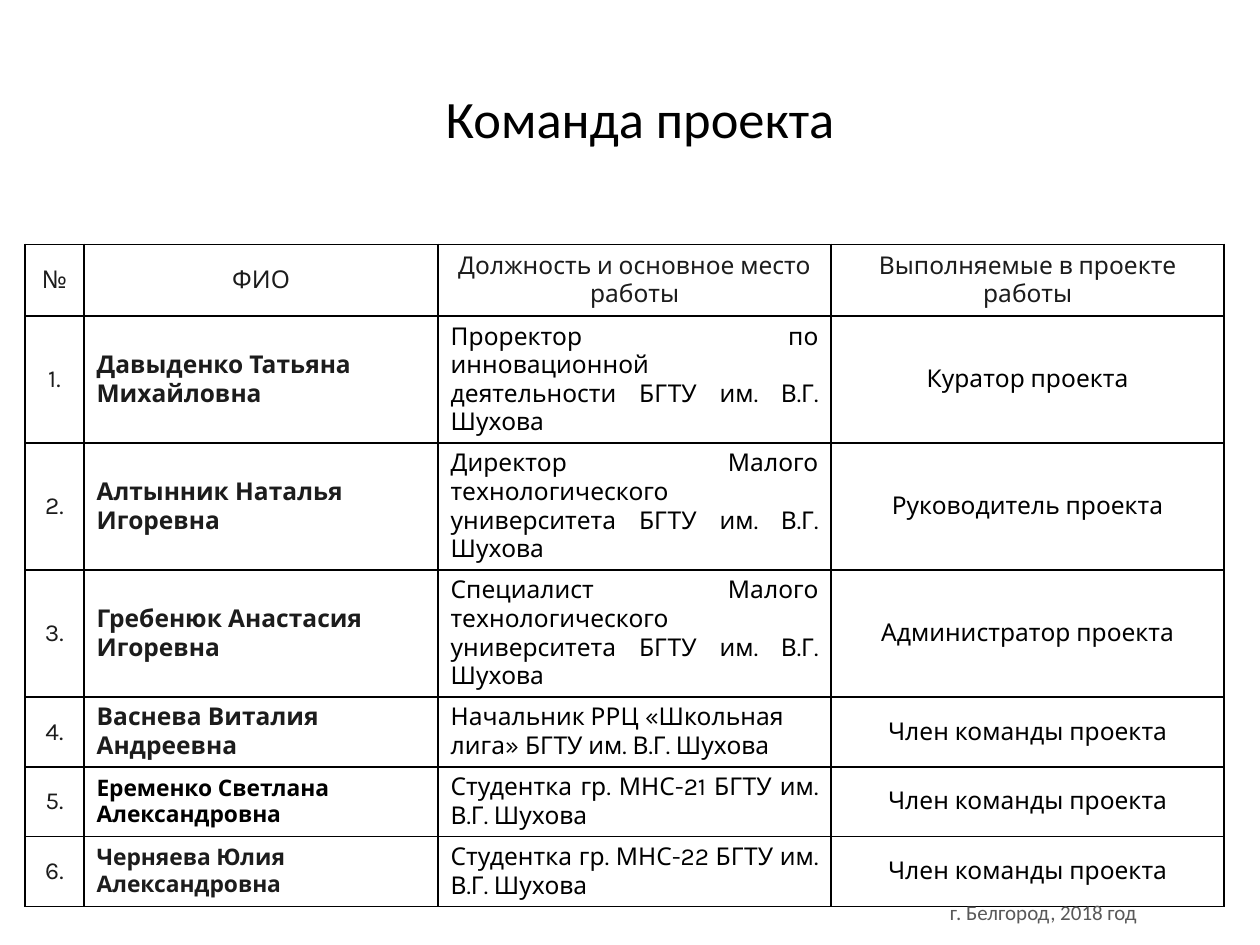
from dataclasses import dataclass

from lxml import etree
from pptx import Presentation
from pptx import util as u
from pptx.dml.color import RGBColor
from pptx.enum import text
from pptx.oxml import ns

COLORS = {"black": "000000", "ink": "1C1C1C", "gray": "595959"}
ALIGN = text.PP_ALIGN
COLUMN_WIDTHS = (33.84, 202.32, 224.64, 224.64)
ROW_HEIGHTS = (41, 24, 24, 24, 29, 24, 29)
HEADERS = ("№", "ФИО", "Должность и основное место работы", "Выполняемые в проекте работы")


@dataclass
class Style:
    size: float = 14
    color: str = "black"
    bold: bool = False
    align: ALIGN = ALIGN.CENTER
    font: str = "Karla"


@dataclass
class Member:
    name: str
    position: str
    role: str = "Член команды проекта"
    name_size: float = 14
    name_color: str = "ink"
    position_align: ALIGN = ALIGN.JUSTIFY
    tight_role: bool = True


MEMBERS = (
    Member("Давыденко Татьяна Михайловна",
           "Проректор по инновационной деятельности БГТУ им. В.Г. Шухова", "Куратор проекта"),
    Member("Алтынник Наталья Игоревна",
           "Директор Малого технологического университета БГТУ им. В.Г. Шухова", "Руководитель проекта"),
    Member("Гребенюк Анастасия Игоревна",
           "Специалист Малого технологического университета БГТУ им. В.Г. Шухова", "Администратор проекта"),
    Member("Васнева Виталия Андреевна",
           "Начальник РРЦ «Школьная лига» БГТУ им. В.Г. Шухова", position_align=ALIGN.LEFT),
    Member("Еременко Светлана Александровна", "Студентка гр. МНС-21 БГТУ им. В.Г. Шухова",
           name_size=13, name_color="black", tight_role=False),
    Member("Черняева Юлия Александровна", "Студентка гр. МНС-22 БГТУ им. В.Г. Шухова",
           name_size=13, tight_role=False),
)


def write_text(text_frame, content: str, style: Style) -> None:
    text_frame.text = content
    paragraph = text_frame.paragraphs[0]
    paragraph.alignment = style.align
    font = paragraph.runs[0].font
    font.name, font.size, font.bold = style.font, u.Pt(style.size), style.bold
    font.color.rgb = RGBColor.from_string(COLORS[style.color])


def add_borders(cell) -> None:
    properties = cell._tc.get_or_add_tcPr()
    for position, side in enumerate(("lnL", "lnR", "lnT", "lnB")):
        line = etree.Element(ns.qn(f"a:{side}"), w=str(u.Pt(1)))
        fill = etree.SubElement(line, ns.qn("a:solidFill"))
        etree.SubElement(fill, ns.qn("a:srgbClr"), val=COLORS["black"])
        properties.insert(position, line)


def fill_cell(cell, content: str, style: Style, tight: bool = False) -> None:
    write_text(cell.text_frame, content, style)
    cell.vertical_anchor = text.MSO_ANCHOR.MIDDLE
    cell.margin_left = cell.margin_right = u.Pt(5.04 if tight else 7.2)
    cell.margin_top = cell.margin_bottom = u.Pt(0 if tight else 3.6)
    cell.fill.background()
    add_borders(cell)


def add_team_table(slide) -> None:
    frame = slide.shapes.add_table(len(MEMBERS) + 1, len(HEADERS), u.Pt(14.2), u.Pt(139.7),
                                   u.Pt(sum(COLUMN_WIDTHS)), u.Pt(sum(ROW_HEIGHTS)))
    table = frame.table
    table.first_row = table.horz_banding = False
    for column, width in zip(table.columns, COLUMN_WIDTHS):
        column.width = u.Pt(width)
    for row, height in zip(table.rows, ROW_HEIGHTS):
        row.height = u.Pt(height)
    for index, header in enumerate(HEADERS):
        fill_cell(table.cell(0, index), header, Style(color="ink"))
    for number, member in enumerate(MEMBERS, start=1):
        number_cell, name_cell, position_cell, role_cell = table.rows[number].cells
        fill_cell(number_cell, f"{number}.", Style(color="ink"))
        fill_cell(name_cell, member.name, Style(member.name_size, member.name_color, True, ALIGN.LEFT))
        fill_cell(position_cell, member.position, Style(align=member.position_align))
        fill_cell(role_cell, member.role, Style(), member.tight_role)


def add_title(slide) -> None:
    title = slide.shapes.title
    title.left, title.top, title.width, title.height = map(u.Pt, (23.8, 33.8, 684, 66.2))
    title.text_frame.vertical_anchor = text.MSO_ANCHOR.MIDDLE
    write_text(title.text_frame, "Команда проекта", Style(size=30, font="Calibri"))


def add_place_and_year(slide) -> None:
    box = slide.shapes.add_textbox(*map(u.Pt, (535.7, 510.5, 211, 21.6)))
    box.text_frame.word_wrap = True
    box.text_frame.auto_size = text.MSO_AUTO_SIZE.SHAPE_TO_FIT_TEXT
    write_text(box.text_frame, "г. Белгород, 2018 год",
               Style(12, "gray", align=ALIGN.LEFT, font="Calibri"))


def main() -> None:
    presentation = Presentation()
    presentation.slide_width, presentation.slide_height = u.Pt(720), u.Pt(540)
    slide = presentation.slides.add_slide(presentation.slide_layouts.get_by_name("Title Only"))
    add_title(slide)
    add_team_table(slide)
    add_place_and_year(slide)
    presentation.save("out.pptx")


if __name__ == "__main__":
    main()
